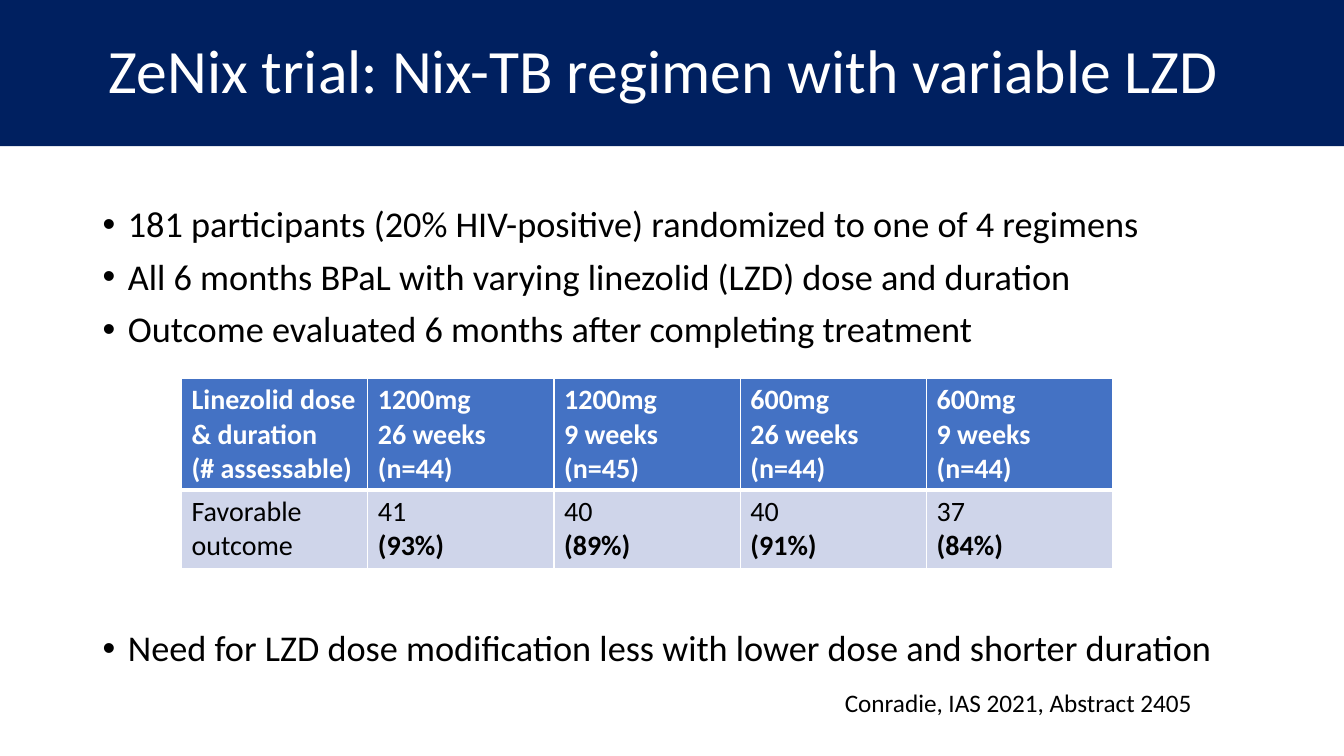
import dataclasses

import pptx
import pptx.dml.color
import pptx.enum.text
import pptx.oxml
import pptx.oxml.ns
import pptx.util

Inches = pptx.util.Inches
Pt = pptx.util.Pt


@dataclasses.dataclass(frozen=True)
class Theme:
    font: str = "Calibri"
    navy: str = "002060"
    header_blue: str = "4472C4"
    row_blue: str = "CFD5EA"
    white: str = "FFFFFF"
    black: str = "000000"
    title_size: float = 44
    bullet_size: float = 25.9
    table_size: float = 20
    citation_size: float = 18


THEME = Theme()

TITLE = "ZeNix trial: Nix-TB regimen with variable LZD"
# Each bullet with its space before in points; the last one clears the table
BULLETS = [
    ("181 participants (20% HIV-positive) randomized to one of 4 regimens", 9.5),
    ("All 6 months BPaL with varying linezolid (LZD) dose and duration", 9.5),
    ("Outcome evaluated 6 months after completing treatment", 9.5),
    ("Need for LZD dose modification less with lower dose and shorter duration", 200),
]
OUTCOMES = [
    ["Linezolid dose\n& duration\n(# assessable)", "1200mg\n26 weeks\n(n=44)",
     "1200mg\n9 weeks\n(n=45)", "600mg\n26 weeks\n(n=44)", "600mg\n9 weeks\n(n=44)"],
    ["Favorable outcome", "41\n(93%)", "40\n(89%)", "40\n(91%)", "37\n(84%)"],
]
CITATION = "Conradie, IAS 2021, Abstract 2405"


def rgb(colour):
    return pptx.dml.color.RGBColor.from_string(colour)


def format_runs(para, size, colour, bold=False):
    for span in para.runs:
        span.font.name = THEME.font
        span.font.size = Pt(size)
        span.font.bold = bold
        span.font.color.rgb = rgb(colour)


def add_title(page, text):
    title = page.shapes.title
    title.left, title.top = Inches(0), Inches(0)
    title.width, title.height = Inches(13.33), Inches(1.45)
    title.fill.solid()
    title.fill.fore_color.rgb = rgb(THEME.navy)
    frame = title.text_frame
    frame.text = text
    frame.auto_size = pptx.enum.text.MSO_AUTO_SIZE.NONE
    frame.vertical_anchor = pptx.enum.text.MSO_ANCHOR.MIDDLE
    frame.margin_left = Inches(1.08)
    para = frame.paragraphs[0]
    para.alignment = pptx.enum.text.PP_ALIGN.LEFT
    para.line_spacing = 0.9
    format_runs(para, THEME.title_size, THEME.white)


def add_text(page, left, top, width, height, text, size, wrap):
    box = page.shapes.add_textbox(Inches(left), Inches(top), Inches(width), Inches(height))
    frame = box.text_frame
    frame.word_wrap = wrap
    frame.text = text
    for para in frame.paragraphs:
        format_runs(para, size, THEME.black)
    return frame


def add_bullets(page, bullets):
    text = "\n".join(line for line, _ in bullets)
    frame = add_text(page, 0.92, 2, 11.5, 4.76, text, THEME.bullet_size, True)
    for para, (_, gap) in zip(frame.paragraphs, bullets):
        para.line_spacing = 0.9
        para.space_before = Pt(gap)
        properties = para._p.get_or_add_pPr()
        properties.set("marL", str(Inches(0.25)))
        properties.set("indent", str(Inches(-0.25)))
        namespace = pptx.oxml.ns.nsdecls("a")
        properties.append(pptx.oxml.parse_xml(f'<a:buFont {namespace} typeface="Arial"/>'))
        properties.append(pptx.oxml.parse_xml(f'<a:buChar {namespace} char="•"/>'))


def set_borders(cell, widths):
    properties = cell._tc.get_or_add_tcPr()
    for position, (side, width) in enumerate(widths.items()):
        border = pptx.oxml.parse_xml(
            f'<a:ln{side} {pptx.oxml.ns.nsdecls("a")} w="{Pt(width)}">'
            f'<a:solidFill><a:srgbClr val="{THEME.white}"/></a:solidFill></a:ln{side}>')
        properties.insert(position, border)


def add_outcome_table(page, rows):
    frame = page.shapes.add_table(len(rows), len(rows[0]), Inches(1.8), Inches(3.75),
                                  Inches(9.24), Inches(1.89))
    table = frame.table
    for column in table.columns:
        column.width = Inches(9.24 / len(rows[0]))
    for row, height in zip(table.rows, (1.11, 0.78)):
        row.height = Inches(height)
    for row_index, row in enumerate(rows):
        header = row_index == 0
        for column_index, text in enumerate(row):
            cell = table.cell(row_index, column_index)
            cell.text_frame.text = text
            cell.fill.solid()
            cell.fill.fore_color.rgb = rgb(THEME.header_blue if header else THEME.row_blue)
            set_borders(cell, {"L": 1, "R": 1, "T": 1 if header else 3, "B": 3 if header else 1})
            for para in cell.text_frame.paragraphs:
                # Percentages stand out in the outcome row
                format_runs(para, THEME.table_size, THEME.white if header else THEME.black,
                            header or "%" in para.text)


def main():
    deck = pptx.Presentation()
    deck.slide_width, deck.slide_height = Inches(13.33), Inches(7.5)
    page = deck.slides.add_slide(deck.slide_layouts.get_by_name("Title Only"))

    # Title band and bullet text
    add_title(page, TITLE)
    add_bullets(page, BULLETS)

    # Trial results and their source
    add_outcome_table(page, OUTCOMES)
    add_text(page, 8.28, 6.77, 3.68, 0.4, CITATION, THEME.citation_size, False)

    deck.save("out.pptx")


if __name__ == "__main__":
    main()
